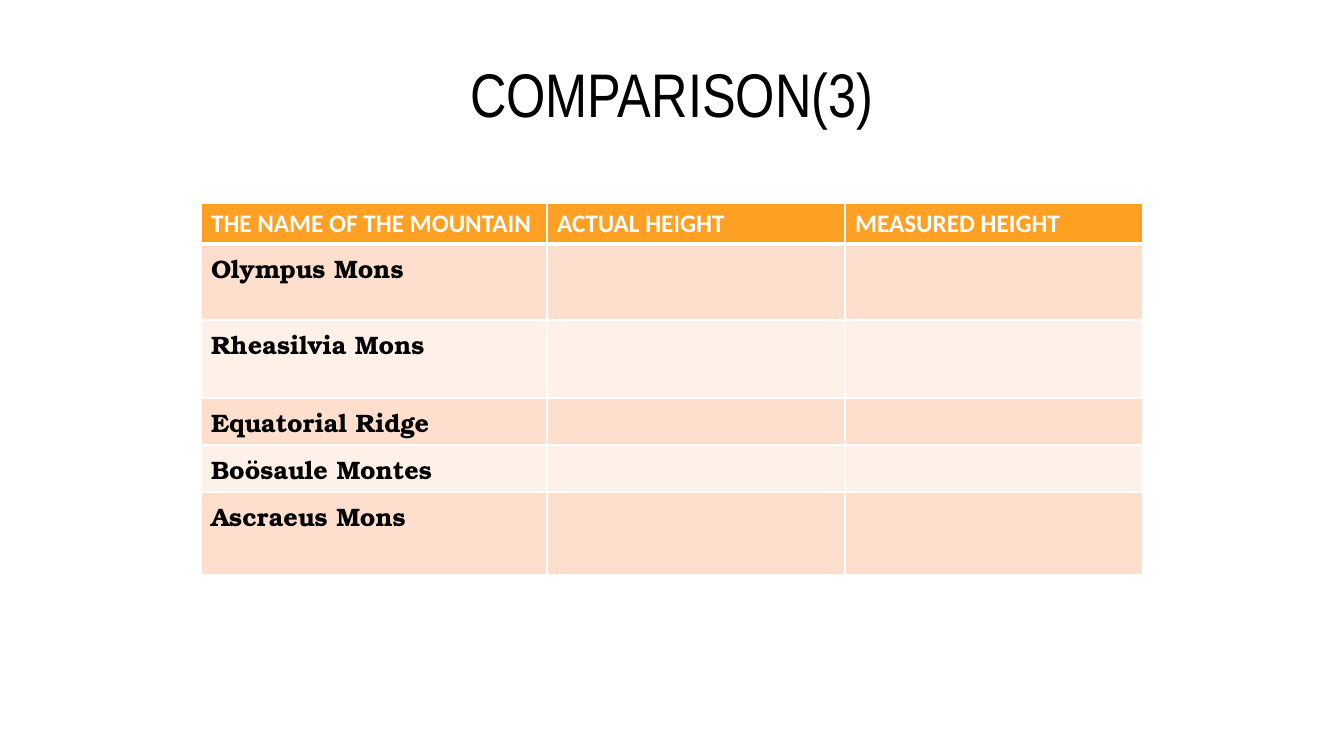
from lxml.etree import SubElement
from pptx import Presentation
from pptx.dml.color import RGBColor
from pptx.enum.text import MSO_ANCHOR, PP_ALIGN
from pptx.oxml.ns import qn
from pptx.util import Pt

THEME = {
    "ink": "000000", "white": "FFFFFF", "header": "FDA023",
    "bands": ("FEDFCD", "FFF0E8"),
    "title_font": "Arial Narrow", "header_font": "Calibri", "name_font": "TeX Gyre Bonum",
    "title_size": 44, "table_size": 18, "thin": 1, "thick": 3,
}
EMU_PER_PX = 9071.43


def px(length):
    return round(length * EMU_PER_PX)


def style_text(paragraph, font_name, size, color, bold):
    for run in paragraph.runs:
        run.font.name = font_name
        run.font.size = Pt(size)
        run.font.bold = bold
        run.font.color.rgb = RGBColor.from_string(color)


presentation = Presentation()
presentation.slide_width, presentation.slide_height = px(1344), px(756)
slide = presentation.slides.add_slide(presentation.slide_layouts[5])

# Title
heading = slide.shapes.title
heading.left, heading.top, heading.width, heading.height = px(67), px(30), px(1210), px(126)
heading.text_frame.text = "COMPARISON(3)"
heading.text_frame.vertical_anchor = MSO_ANCHOR.MIDDLE
heading.text_frame.paragraphs[0].alignment = PP_ALIGN.CENTER
style_text(heading.text_frame.paragraphs[0], THEME["title_font"], THEME["title_size"],
           THEME["ink"], False)

# Mountain heights: the two height columns are left to be filled in
mountain_rows = [
    ("THE NAME OF THE MOUNTAIN", "ACTUAL HEIGHT", "MEASURED HEIGHT"),
    ("Olympus Mons", "", ""),
    ("Rheasilvia Mons", "", ""),
    ("Equatorial Ridge", "", ""),
    ("Boösaule Montes", "", ""),
    ("Ascraeus Mons", "", ""),
]
column_widths = (346, 298, 298)
row_heights = (41, 76, 78, 47, 47, 83)

mountains = slide.shapes.add_table(
    len(row_heights), len(column_widths), px(201), px(203),
    px(sum(column_widths)), px(sum(row_heights))).table
for column, width in zip(mountains.columns, column_widths):
    column.width = px(width)

for row_index, (row, height, entries) in enumerate(
        zip(mountains.rows, row_heights, mountain_rows)):
    row.height = px(height)
    is_header = row_index == 0
    if is_header:
        background, font_name, color = THEME["header"], THEME["header_font"], THEME["white"]
    else:
        background = THEME["bands"][(row_index - 1) % 2]
        font_name, color = THEME["name_font"], THEME["ink"]

    for cell, entry in zip(row.cells, entries):
        if entry:
            cell.text_frame.text = entry
            style_text(cell.text_frame.paragraphs[0], font_name, THEME["table_size"],
                       color, True)

        # White cell borders, heavier between the header and the body
        properties = cell._tc.get_or_add_tcPr()
        for side in ("lnL", "lnR", "lnT", "lnB"):
            heavy = (is_header and side == "lnB") or (row_index == 1 and side == "lnT")
            line_width = THEME["thick"] if heavy else THEME["thin"]
            border = SubElement(properties, qn(f"a:{side}"), w=str(Pt(line_width)))
            border_fill = SubElement(border, qn("a:solidFill"))
            SubElement(border_fill, qn("a:srgbClr"), val=THEME["white"])

        cell.fill.solid()
        cell.fill.fore_color.rgb = RGBColor.from_string(background)

presentation.save("out.pptx")
